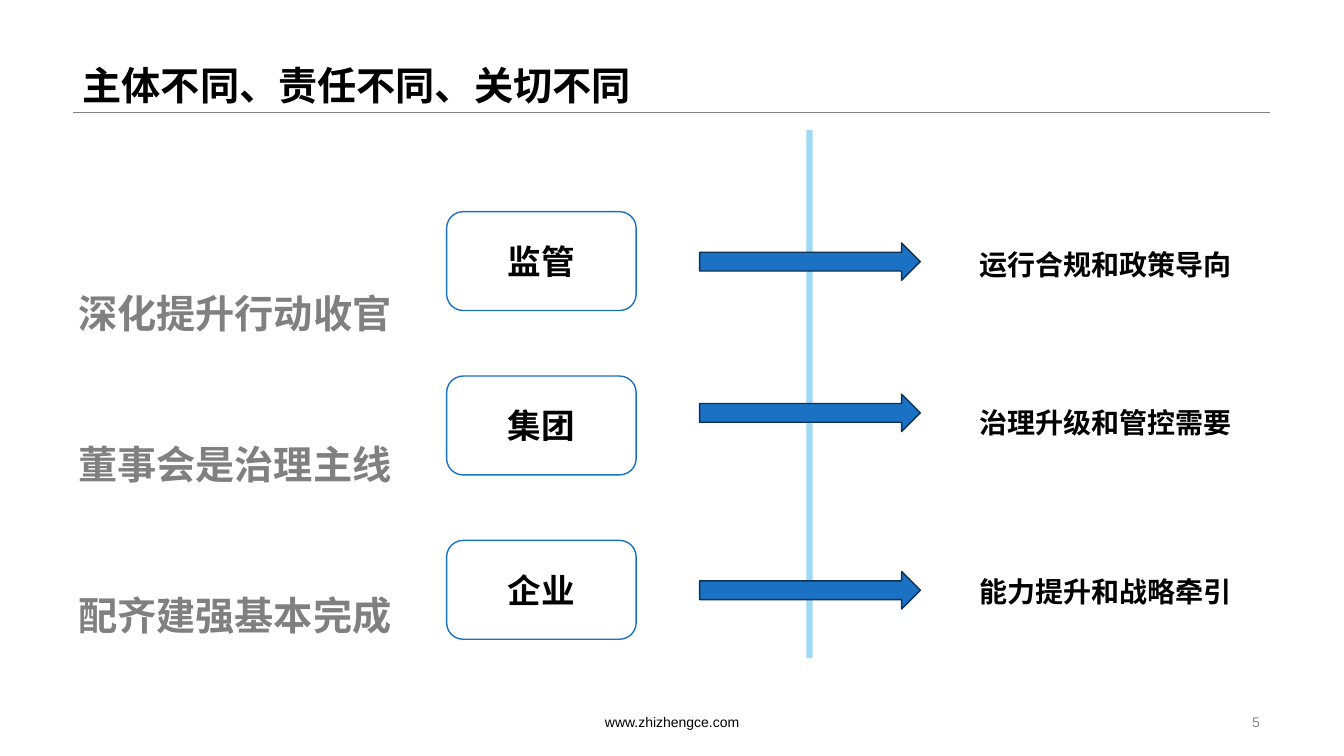
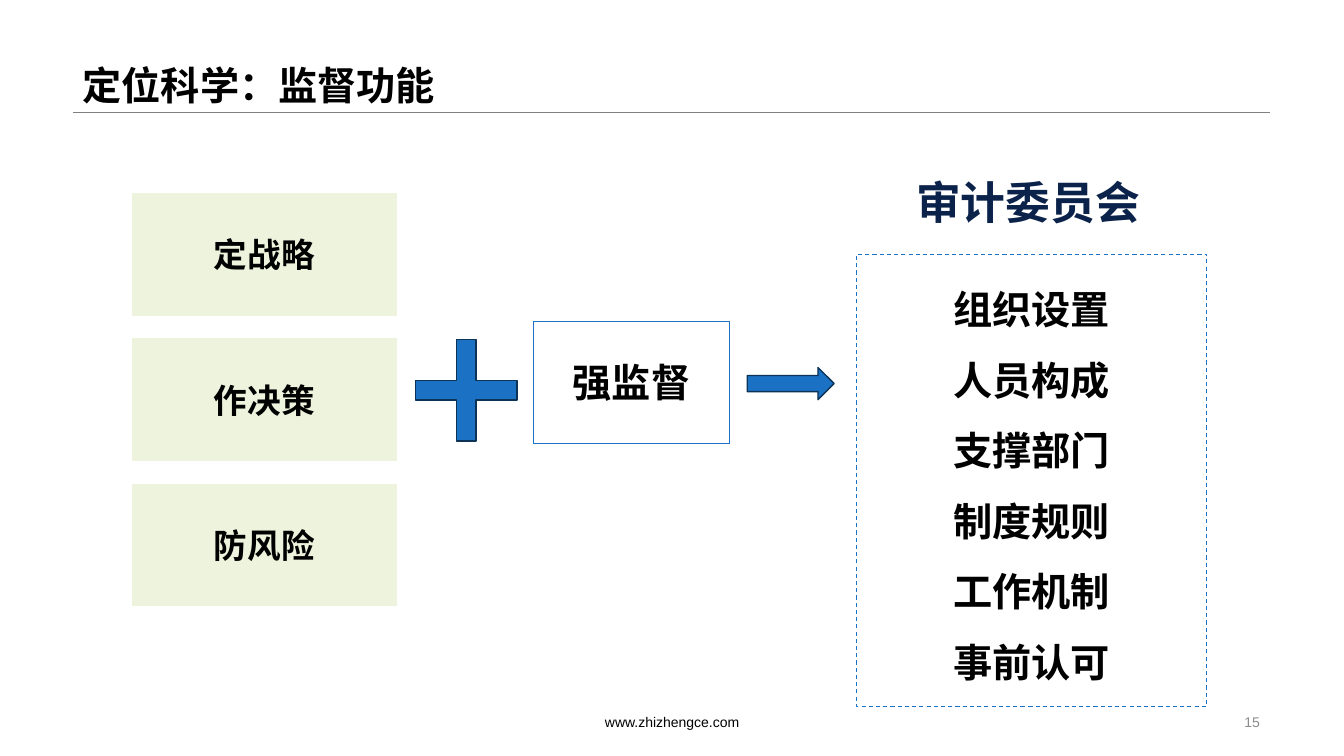
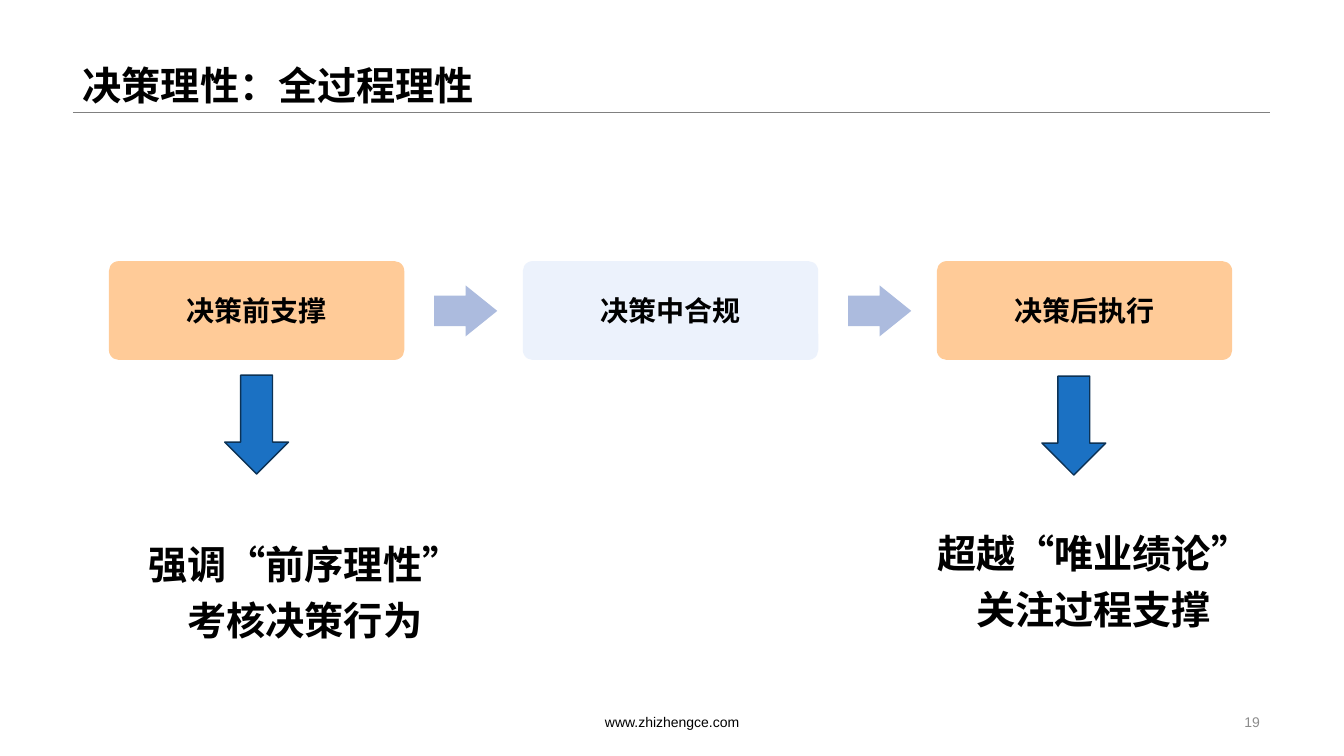
from pptx import Presentation
from pptx.util import Pt
from pptx.dml.color import RGBColor
from pptx.enum.dml import MSO_LINE
from pptx.enum.shapes import MSO_SHAPE as SHP, MSO_CONNECTOR as CON
from pptx.enum.text import PP_ALIGN as AL, MSO_ANCHOR as ANC
from pptx.oxml.ns import qn
from lxml import etree

COLORS = {
    "black": "000000", "white": "FFFFFF", "gray": "808080", "number": "8C8C8C",
    "blue": "1B71C3", "edge": "0C3255", "sky": "9EDAF4", "navy": "0B234B",
    "green": "EDF3DC", "orange": "FF9933", "pale": "DAE6FA", "lilac": "ACBBDE",
}
LATIN, CJK = "Arial", "Noto Sans CJK SC"
FOOTER = "www.zhizhengce.com"
ARROW = {"fill": "blue", "line": "edge"}


def rgb(name):
    return RGBColor.from_string(COLORS[name])


def write(shape, lines, size, color="black", bold=True, font=LATIN,
          align=AL.CENTER, anchor=ANC.TOP, **spacing):
    tf = shape.text_frame
    for key, value in {"word_wrap": True, "vertical_anchor": anchor}.items():
        setattr(tf, key, value)
    for i, line in enumerate(lines):
        p = tf.paragraphs[0] if i == 0 else tf.add_paragraph()
        for key, value in {"alignment": align, **spacing}.items():
            setattr(p, key, value)
        r = p.add_run()
        r.text = line
        for key, value in {"size": Pt(size), "bold": bold, "name": font}.items():
            setattr(r.font, key, value)
        r.font.color.rgb = rgb(color)
        ea = etree.SubElement(r.font._element, qn("a:ea"))
        ea.set("typeface", CJK)


def add_text(s, box, lines, size, **style):
    write(s.shapes.add_textbox(*map(Pt, box)), lines, size, **style)


def add_box(s, kind, box, fill=None, line=None, width=1, dash=None, adj=(), alpha=None):
    sp = s.shapes.add_shape(kind, *map(Pt, box))
    sp.shadow.inherit = False
    for i, value in enumerate(adj):
        sp.adjustments[i] = value
    if fill:
        sp.fill.solid()
        sp.fill.fore_color.rgb = rgb(fill)
    else:
        sp.fill.background()
    if alpha:
        clr = sp._element.spPr.find(qn("a:solidFill"))[0]
        etree.SubElement(clr, qn("a:alpha")).set("val", str(alpha * 1000))
    if line:
        sp.line.color.rgb = rgb(line)
        sp.line.width = Pt(width)
        if dash:
            sp.line.dash_style = dash
    else:
        sp.line.fill.background()
    return sp


def add_frame(prs, title, number):
    s = prs.slides.add_slide(prs.slide_layouts[6])
    add_text(s, (349, 506, 262, 20), [FOOTER], 10, bold=False)
    rule = s.shapes.add_connector(CON.STRAIGHT, Pt(52), Pt(80.7), Pt(907), Pt(80.7))
    rule.line.color.rgb = rgb("gray")
    rule.line.width = Pt(0.75)
    etree.SubElement(rule._element.spPr, qn("a:effectLst"))
    add_text(s, (52, 10, 855, 70.6), [title], 28, font=CJK, align=AL.LEFT, anchor=ANC.BOTTOM)
    add_text(s, (612, 504.7, 295, 21.6), [str(number)], 10, color="number", bold=False,
             align=AL.RIGHT, anchor=ANC.MIDDLE)
    return s


def add_roles(s, x, y, names, pitch):
    for i, name in enumerate(names):
        sp = add_box(s, SHP.ROUNDED_RECTANGLE, (x, y + i * pitch, 135.4, 70.6), "white", "blue")
        write(sp, [name], 24, anchor=ANC.MIDDLE)


def add_concerns(s, x, y, concerns):
    add_box(s, SHP.RECTANGLE, (x + 76.3, y, 4.5, 377.3), "sky")
    for name, arrow_y, label_y in concerns:
        add_box(s, SHP.RIGHT_ARROW, (x, y + arrow_y, 157.7, 26.8), **ARROW)
        add_text(s, (x + 157.7, y + label_y, 265, 31.7), [name], 20)


def add_functions(s, x, y, names, pitch):
    for i, name in enumerate(names):
        sp = add_box(s, SHP.RECTANGLE, (x, y + i * pitch, 190, 88.4), "green", "white")
        write(sp, [name], 24, anchor=ANC.MIDDLE)


def add_supervision(s, x, y, name):
    add_box(s, SHP.MATH_PLUS, (x, y, 98.6, 98.6), adj=[0.142], **ARROW)
    sp = add_box(s, SHP.RECTANGLE, (x + 97, y, 140.5, 87), line="blue", width=0.75)
    write(sp, [name], 28, anchor=ANC.MIDDLE)
    add_box(s, SHP.RIGHT_ARROW, (x + 250, y + 33, 62, 23), **ARROW)


def add_committee(s, x, y, heading, items):
    add_text(s, (x + 16.6, y, 211.7, 46), [heading], 32, color="navy")
    add_box(s, SHP.RECTANGLE, (x, y + 60.5, 250, 323), line="blue", width=0.75,
            dash=MSO_LINE.DASH)
    add_text(s, (x + 16.6, y + 62.5, 216.7, 307), items, 28, line_spacing=Pt(50.4))


def add_process(s, x, y, steps, pitch):
    for i, (name, fill) in enumerate(steps):
        left = x + i * pitch
        if i:
            add_box(s, SHP.RIGHT_ARROW, (left - 63.3, y + 17.4, 45, 36.4), "lilac",
                    adj=[0.6, 0.62])
        sp = add_box(s, SHP.ROUNDED_RECTANGLE, (left, y, 211, 70.6), fill, adj=[0.1], alpha=50)
        write(sp, [name], 20, anchor=ANC.MIDDLE)


def add_outcome(s, arrow_x, arrow_y, box, lines):
    add_box(s, SHP.DOWN_ARROW, (arrow_x, arrow_y, 45.6, 70.6), **ARROW)
    add_text(s, box, lines, 28, line_spacing=Pt(30.4), space_after=Pt(9.8))


def main():
    prs = Presentation()
    prs.slide_width, prs.slide_height = Pt(960), Pt(540)

    s = add_frame(prs, "主体不同、责任不同、关切不同", 5)
    add_roles(s, 319, 151.2, ["监管", "集团", "企业"], 117.4)
    add_concerns(s, 499.7, 92.9, [
        ("运行合规和政策导向", 80.6, 80.6),
        ("治理升级和管控需要", 188.6, 193),
        ("能力提升和战略牵引", 315.3, 314),
    ])
    add_text(s, (46, 129, 243.4, 335.5),
             ["深化提升行动收官", "董事会是治理主线", "配齐建强基本完成"], 28,
             color="gray", font=CJK, line_spacing=Pt(107.8))

    s = add_frame(prs, "定位科学：监督功能", 15)
    add_functions(s, 93.8, 137.5, ["定战略", "作决策", "防风险"], 103.7)
    add_supervision(s, 283.8, 229.5, "强监督")
    add_committee(s, 612, 121, "审计委员会",
                  ["组织设置", "人员构成", "支撑部门", "制度规则", "工作机制", "事前认可"])

    s = add_frame(prs, "决策理性：全过程理性", 19)
    add_process(s, 77.8, 186.5, [
        ("决策前支撑", "orange"), ("决策中合规", "pale"), ("决策后执行", "orange"),
    ], 295.7)
    add_outcome(s, 160.5, 268, (62.6, 385.5, 310.3, 80), ["强调“前序理性”", "考核决策行为"])
    add_outcome(s, 744.2, 268.7, (612, 377.5, 338.4, 80), ["超越“唯业绩论”", "关注过程支撑"])

    prs.save("out.pptx")


if __name__ == "__main__":
    main()
